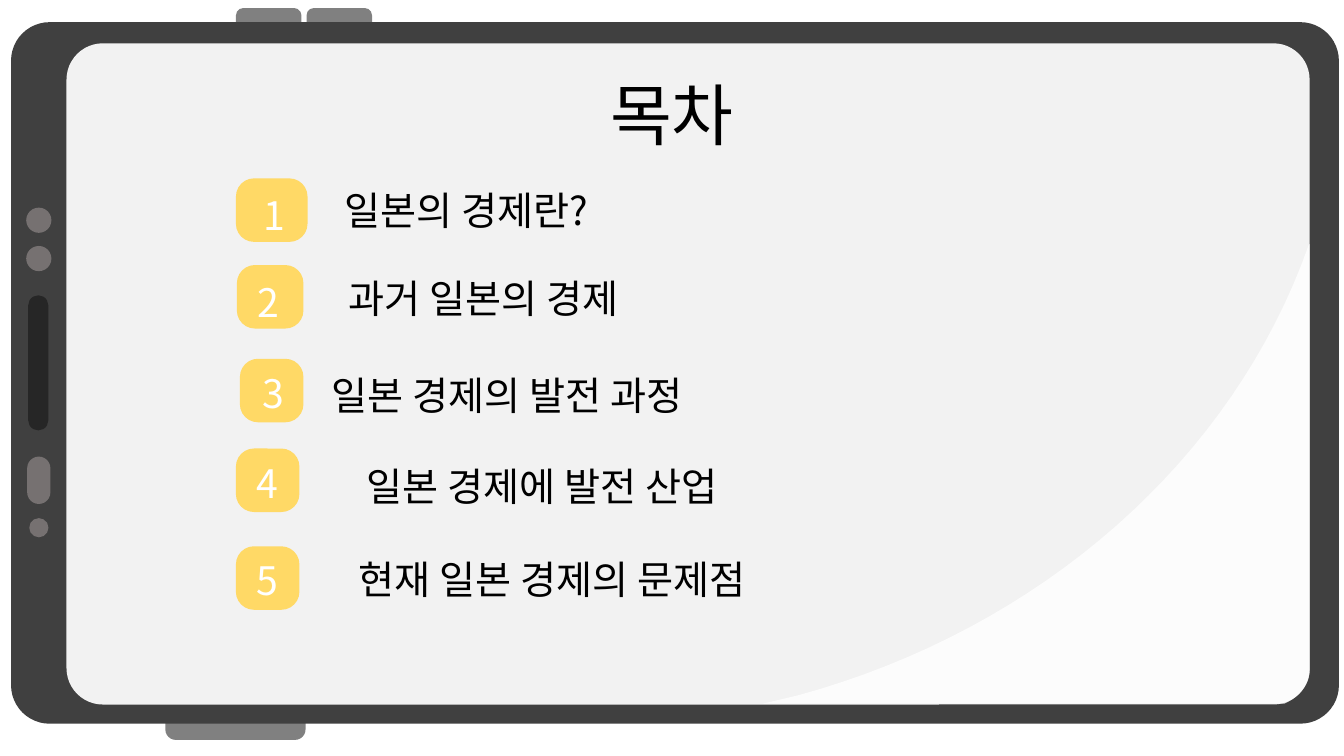
from dataclasses import dataclass

from lxml.etree import SubElement
from pptx import Presentation
from pptx.dml.color import RGBColor
from pptx.enum.shapes import MSO_SHAPE
from pptx.enum.text import MSO_ANCHOR, MSO_AUTO_SIZE, PP_ALIGN
from pptx.oxml.ns import qn
from pptx.util import Emu, Pt

PX = 9144


@dataclass(frozen=True)
class Theme:
    font: str = "Noto Sans CJK KR"
    title_size: int = 48
    item_size: int = 28
    text: str = "000000"
    badge: str = "FFD966"
    badge_text: str = "FFFFFF"
    button: str = "808080"
    body: str = "404040"
    screen: str = "F2F2F2"
    speaker: str = "262626"
    sensor: str = "767171"
    shine: str = "FFFFFF"


def px(*lengths):
    return [Emu(n * PX) for n in lengths]


def bezier(p0, p1, p2, p3, steps=32):
    points = []
    for i in range(1, steps + 1):
        t = i / steps
        u = 1 - t
        weights = (u ** 3, 3 * u * u * t, 3 * u * t * t, t ** 3)
        points.append(tuple(sum(w * p[axis] for w, p in zip(weights, (p0, p1, p2, p3)))
                            for axis in (0, 1)))
    return points


class SlideBuilder:
    def __init__(self, prs, theme):
        self.theme = theme
        self.slide = prs.slides.add_slide(prs.slide_layouts[5])
        self.shapes = self.slide.shapes

    def start_group(self):
        self.shapes = self.slide.shapes.add_group_shape().shapes

    def paint(self, sp, color):
        sp.shadow.inherit = False
        sp.fill.solid()
        sp.fill.fore_color.rgb = RGBColor.from_string(color)
        sp.line.fill.background()

    def shape(self, kind, box, color, radius=None):
        sp = self.shapes.add_shape(kind, *px(*box))
        if radius is not None:
            sp.adjustments[0] = radius
        self.paint(sp, color)

    def rounded(self, box, color, radius=None):
        self.shape(MSO_SHAPE.ROUNDED_RECTANGLE, box, color, radius)

    def circle(self, box, color):
        self.shape(MSO_SHAPE.OVAL, box, color)

    def outline(self, points, color, opacity):
        start, *rest = [(x * PX, y * PX) for x, y in points]
        builder = self.shapes.build_freeform(*start)
        builder.add_line_segments(rest)
        sp = builder.convert_to_shape()
        self.paint(sp, color)
        clr = sp._element.spPr.find(qn("a:solidFill")).find(qn("a:srgbClr"))
        SubElement(clr, qn("a:alpha")).set("val", str(opacity * 1000))

    def set_text(self, sp, text, size, color, align):
        tf = sp.text_frame
        tf.text = text
        tf.word_wrap = True
        tf.auto_size = MSO_AUTO_SIZE.SHAPE_TO_FIT_TEXT
        tf.vertical_anchor = MSO_ANCHOR.TOP
        p = tf.paragraphs[0]
        p.alignment = align
        r = p.runs[0]
        r.font.name = self.theme.font
        r.font.size = Pt(size)
        r.font.color.rgb = RGBColor.from_string(color)
        SubElement(r.font._element, qn("a:ea")).set("typeface", self.theme.font)

    def title(self, text, box):
        sp = self.slide.shapes.title
        sp.left, sp.top, sp.width, sp.height = px(*box)
        self.slide.shapes._spTree.append(sp._element)
        self.set_text(sp, text, self.theme.title_size, self.theme.text, PP_ALIGN.CENTER)

    def text(self, text, box, color, align=PP_ALIGN.CENTER):
        sp = self.shapes.add_textbox(*px(*box))
        self.set_text(sp, text, self.theme.item_size, color, align)


def draw_phone(s):
    t = s.theme
    s.start_group()
    for box in ((234, 8, 65, 44), (304, 8, 65, 44), (164, 672, 139, 62)):
        s.rounded(box, t.button)
    s.rounded((11, 22, 1317, 696), t.body, 0.055)
    s.rounded((66, 43, 1233, 656), t.screen, 0.055)
    s.rounded((28, 293, 20, 134), t.speaker, 0.5)
    for box in ((26, 206, 25, 25), (26, 244, 25, 25), (29, 514, 19, 19)):
        s.circle(box, t.sensor)
    s.rounded((27, 453, 23, 47), t.sensor, 0.5)
    corner = bezier((1299, 664), (1299, 679), (1289, 691), (1276, 697))
    sweep = bezier((791, 690), (1033, 624), (1223, 456), (1298, 243))
    s.outline([(1299, 242), (1299, 664), *corner, (1274, 698), (757, 698),
               (791, 690), *sweep, (1299, 242)], t.shine, 80)


def draw_contents(s):
    t = s.theme
    center, left = PP_ALIGN.CENTER, PP_ALIGN.LEFT
    rows = [
        ("일본의 경제란?", (234, 177, 71), (205, 185, 134), (281, 180, 363), center),
        ("과거 일본의 경제", (235, 263, 66), (209, 271, 114), (311, 267, 337), center),
        ("일본 경제의 발전 과정", (238, 356, 63), (217, 361, 108), (319, 363, 490), left),
        ("일본 경제에 발전 산업", (234, 445, 63), (211, 451, 108), (302, 454, 471), center),
        ("현재 일본 경제의 문제점", (234, 542, 63), (211, 547, 108), (277, 546, 541), center),
    ]
    for number, (item, badge, digit, label, align) in enumerate(rows, 1):
        s.start_group()
        s.rounded((*badge, 63), t.badge, 0.285)
        s.text(str(number), (*digit, 57), t.badge_text)
        s.text(item, (*label, 57), t.text, align)


def main():
    prs = Presentation()
    prs.slide_width, prs.slide_height = px(1333, 750)
    s = SlideBuilder(prs, Theme())
    draw_phone(s)
    s.title("목차", (417, 68, 499, 91))
    draw_contents(s)
    prs.save("out.pptx")


if __name__ == "__main__":
    main()
